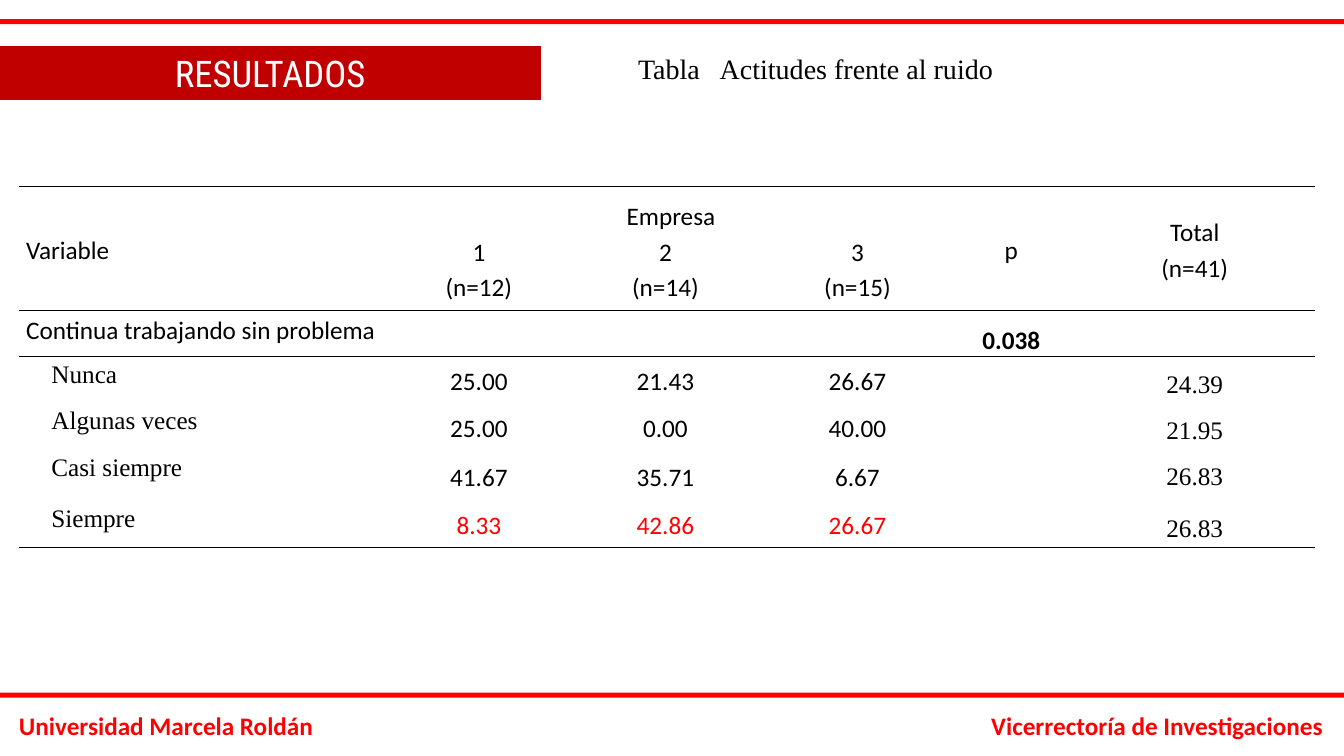
from dataclasses import dataclass

from lxml import etree
from pptx import Presentation
from pptx.dml.color import RGBColor
from pptx.enum.shapes import MSO_SHAPE
from pptx.enum.text import MSO_ANCHOR, MSO_AUTO_SIZE, PP_ALIGN
from pptx.oxml.ns import qn
from pptx.util import Inches, Pt

LEFT, CENTER, RIGHT = PP_ALIGN.LEFT, PP_ALIGN.CENTER, PP_ALIGN.RIGHT
TOP, MIDDLE, BOTTOM = MSO_ANCHOR.TOP, MSO_ANCHOR.MIDDLE, MSO_ANCHOR.BOTTOM
RECTANGLE = MSO_SHAPE.RECTANGLE
FIT_SHAPE, NO_FIT = MSO_AUTO_SIZE.SHAPE_TO_FIT_TEXT, MSO_AUTO_SIZE.NONE
TITLE_ONLY = 5
PLAIN_TABLE = "{2D5ABB26-0587-4C30-8999-92F81FD0307C}"


@dataclass(frozen=True)
class Theme:
    red: str = "FF0000"
    dark_red: str = "C00000"
    black: str = "000000"
    white: str = "FFFFFF"
    sans: str = "Calibri"
    serif: str = "Times New Roman"
    heading: str = "Roboto Condensed"
    body_size: float = 18
    caption_size: float = 20
    title_size: float = 26.2


THEME = Theme()
COLUMN_WIDTHS = [3.72, 1.68, 2.02, 1.79, 1.26, 2.38]
ROW_HEIGHTS = [0.46, 0.77, 0.46, 0.46, 0.46, 0.51, 0.46]
RULES_ABOVE, RULES_BELOW = (0, 2), (1, 6)
COMPANIES = ["1\n(n=12)", "2\n(n=14)", "3\n(n=15)"]
ANSWERS = [
    ("Nunca", ["25.00", "21.43", "26.67"], "24.39"),
    ("Algunas veces", ["25.00", "0.00", "40.00"], "21.95"),
    ("Casi siempre", ["41.67", "35.71", "6.67"], "26.83"),
    ("Siempre", ["8.33", "42.86", "26.67"], "26.83"),
]


def write(frame, text, size=THEME.body_size, font=THEME.sans, color=THEME.black,
          bold=False, align=LEFT, spacing=1.0):
    """Fill a text frame, one paragraph per line of text."""
    paragraph_format = {"alignment": align, "line_spacing": spacing}
    font_format = {"size": Pt(size), "name": font, "bold": bold}
    for number, line in enumerate(text.split("\n")):
        paragraph = frame.add_paragraph() if number else frame.paragraphs[0]
        for name, value in paragraph_format.items():
            setattr(paragraph, name, value)
        run = paragraph.add_run()
        run.text = line
        for name, value in font_format.items():
            setattr(run.font, name, value)
        run.font.color.rgb = RGBColor.from_string(color)


def add_band(slide, top):
    """Draw a thin red band across the slide."""
    band = slide.shapes.add_shape(RECTANGLE, 0, Inches(top), Inches(13.33), Inches(0.05))
    band.shadow.inherit = False
    band.fill.solid()
    band.fill.fore_color.rgb = RGBColor.from_string(THEME.red)
    band.line.fill.background()


def add_label(slide, text, left, top, width, height, **style):
    """Add a wrapping text box and return its frame."""
    frame = slide.shapes.add_textbox(*map(Inches, (left, top, width, height))).text_frame
    frame.word_wrap = True
    frame.auto_size = FIT_SHAPE
    write(frame, text, **style)
    return frame


def add_tab_stop(paragraph, position):
    """Set one left tab stop in a paragraph."""
    stops = etree.SubElement(paragraph._p.get_or_add_pPr(), qn("a:tabLst"))
    etree.SubElement(stops, qn("a:tab"), pos=str(Inches(position)), algn="l")


def format_title(title, text):
    """Turn the title placeholder into the dark red heading bar."""
    place = {"left": 0, "top": 0.46, "width": 5.36, "height": 0.53}
    for name, value in place.items():
        setattr(title, name, Inches(value))
    title.fill.solid()
    title.fill.fore_color.rgb = RGBColor.from_string(THEME.dark_red)
    title.line.color.rgb = RGBColor.from_string(THEME.dark_red)
    title.line.width = Pt(0.75)
    frame_format = {
        "vertical_anchor": BOTTOM, "auto_size": NO_FIT, "word_wrap": True,
        "margin_left": Inches(0.08), "margin_right": Inches(0.08),
        "margin_top": Inches(0.04), "margin_bottom": Inches(0.04),
    }
    for name, value in frame_format.items():
        setattr(title.text_frame, name, value)
    write(title.text_frame, text, size=THEME.title_size, font=THEME.heading,
          color=THEME.white, align=CENTER, spacing=0.9)


def rule_cell(cell, edge):
    """Draw a black rule on one edge of a cell."""
    line = etree.Element(qn(f"a:ln{edge}"), w=str(Pt(1)))
    fill = etree.SubElement(line, qn("a:solidFill"))
    etree.SubElement(fill, qn("a:srgbClr"), val=THEME.black)
    cell._tc.get_or_add_tcPr().insert(0, line)


def fill_cell(cell, text, anchor=MIDDLE, indent=0, align=CENTER, spacing=1.15, **style):
    """Write and align the text of one table cell."""
    cell.vertical_anchor = anchor
    cell.margin_left = Inches(0.07 + indent)
    write(cell.text_frame, text, align=align, spacing=spacing, **style)


def add_grid(slide):
    """Add the bare table with its merged headings and horizontal rules."""
    table = slide.shapes.add_table(
        len(ROW_HEIGHTS), len(COLUMN_WIDTHS), Inches(0.19), Inches(1.85),
        Inches(sum(COLUMN_WIDTHS)), Inches(sum(ROW_HEIGHTS))).table
    table.first_row = table.horz_banding = False
    table._tbl.tblPr.find(qn("a:tableStyleId")).text = PLAIN_TABLE
    for column, width in zip(table.columns, COLUMN_WIDTHS):
        column.width = Inches(width)
    for row, height in zip(table.rows, ROW_HEIGHTS):
        row.height = Inches(height)
    for column in (0, 4, 5):
        table.cell(0, column).merge(table.cell(1, column))
    table.cell(0, 1).merge(table.cell(0, 3))
    margins = {"margin_left": 0.07, "margin_right": 0.07, "margin_top": 0, "margin_bottom": 0}
    for number, row in enumerate(table.rows):
        for cell in row.cells:
            for name, value in margins.items():
                setattr(cell, name, Inches(value))
            cell.fill.background()
            if number + cell.span_height - 1 in RULES_BELOW:
                rule_cell(cell, "B")
            if number in RULES_ABOVE:
                rule_cell(cell, "T")
    return table


def add_results(slide):
    """Fill the table of attitudes towards noise."""
    table = add_grid(slide)
    fill_cell(table.cell(0, 0), "Variable", align=LEFT)
    fill_cell(table.cell(0, 1), "Empresa", spacing=1.5)
    fill_cell(table.cell(0, 4), "p")
    fill_cell(table.cell(0, 5), "Total\n(n=41)")
    for column, company in enumerate(COMPANIES, 1):
        fill_cell(table.cell(1, column), company, anchor=TOP)
    fill_cell(table.cell(2, 0), "Continua trabajando sin problema", anchor=TOP, align=LEFT)
    fill_cell(table.cell(2, 4), "0.038", anchor=TOP, spacing=1.5, bold=True)
    for row, (answer, shares, total) in enumerate(ANSWERS, 3):
        color = THEME.red if answer == "Siempre" else THEME.black
        fill_cell(table.cell(row, 0), answer, anchor=TOP, indent=0.25, align=LEFT,
                  font=THEME.serif)
        for column, share in enumerate(shares, 1):
            fill_cell(table.cell(row, column), share, color=color)
        fill_cell(table.cell(row, 5), total, anchor=TOP, spacing=1.5, font=THEME.serif)


def main():
    """Build the results slide and save it."""
    deck = Presentation()
    deck.slide_width, deck.slide_height = Inches(13.33), Inches(7.5)
    slide = deck.slides.add_slide(deck.slide_layouts[TITLE_ONLY])
    for top in (6.87, 0.19):
        add_band(slide, top)
    footer = {"color": THEME.red, "bold": True}
    add_label(slide, "Universidad Marcela Roldán", 0.09, 7, 3.27, 0.4, **footer)
    add_label(slide, "Vicerrectoría de Investigaciones", 8.95, 7, 4.27, 0.4,
              align=RIGHT, **footer)
    format_title(slide.shapes.title, "RESULTADOS")
    add_results(slide)
    caption = add_label(slide, "Tabla\tActitudes frente al ruido", 6.23, 0.46, 5.12, 0.44,
                        size=THEME.caption_size, font=THEME.serif)
    add_tab_stop(caption.paragraphs[0], 0.81)
    deck.save("out.pptx")


if __name__ == "__main__":
    main()
